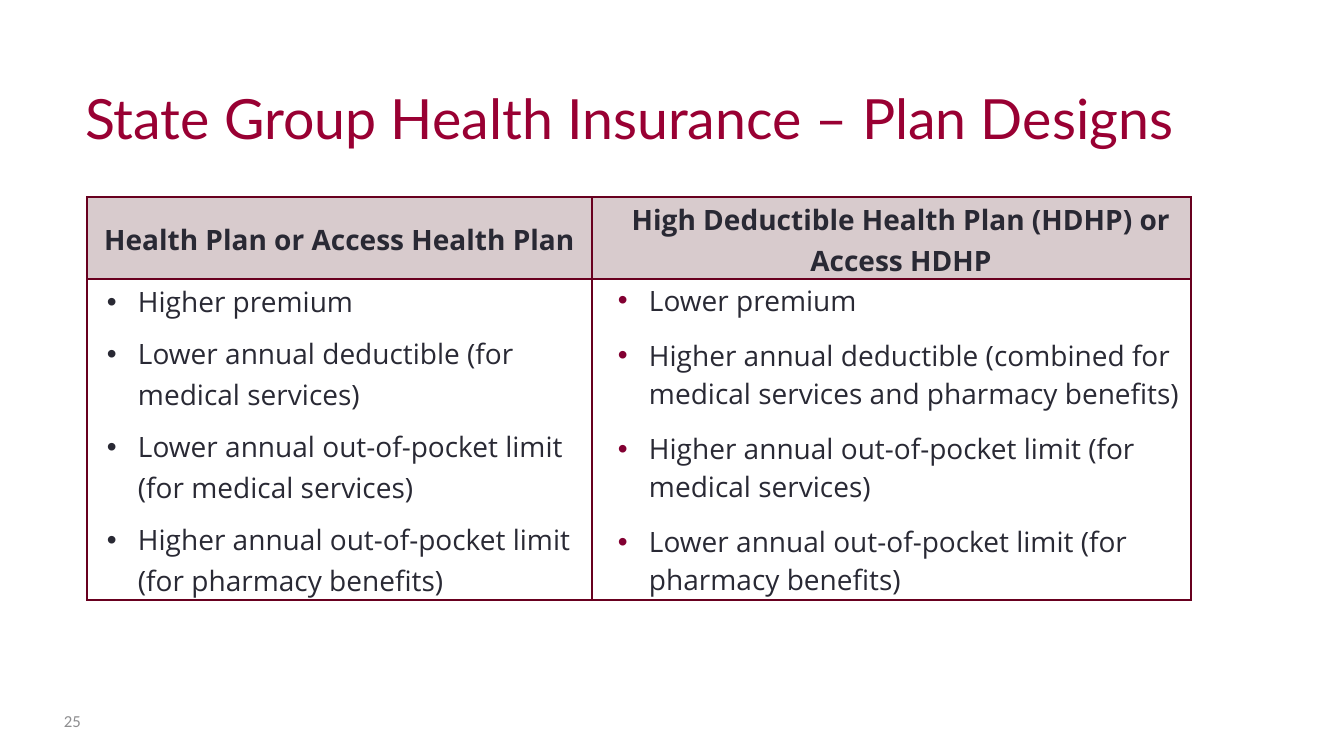
"""Build the slide that compares the State Group Health Insurance plan designs."""
from lxml.etree import SubElement
from pptx import Presentation
from pptx.dml.color import RGBColor
from pptx.enum.text import MSO_ANCHOR, MSO_AUTO_SIZE, PP_ALIGN
from pptx.oxml.ns import qn
from pptx.util import Pt

PX = 12192000 / 1344
COLORS = {
    "title": "990033",
    "text": "292934",
    "number": "8E8E90",
    "header": "D8CBCD",
    "border": "68001F",
    "bullet": "820032",
}


def px(length):
    return round(length * PX)


def write(frame, text, size=20, font="Open Sans", color="text", bold=False,
          align=PP_ALIGN.LEFT, spacing=None, before=None, after=None,
          margin=0, indent=0, bullet=None, level=0):
    frame.word_wrap = True
    for index, line in enumerate(text.split("\n")):
        paragraph = frame.paragraphs[0] if index == 0 else frame.add_paragraph()
        properties = paragraph._p.get_or_add_pPr()
        properties.set("marL", str(px(margin)))
        properties.set("indent", str(px(indent)))
        if bullet:
            bullet_color = SubElement(properties, qn("a:buClr"))
            SubElement(bullet_color, qn("a:srgbClr"), val=COLORS[bullet])
            SubElement(properties, qn("a:buFont"), typeface="Arial")
            SubElement(properties, qn("a:buChar"), char="•")
        paragraph.level = level
        paragraph.alignment = align
        paragraph.line_spacing = spacing
        paragraph.space_before = Pt(before) if before and index else Pt(0)
        paragraph.space_after = Pt(after or 0)
        run = paragraph.add_run()
        run.text = line
        run.font.size = Pt(size)
        run.font.name = font
        run.font.bold = bold
        run.font.color.rgb = RGBColor.from_string(COLORS[color])


deck = Presentation()
deck.slide_width, deck.slide_height = px(1344), px(756)
slide = deck.slides.add_slide(deck.slide_layouts[5])

title = slide.shapes.title
title.left, title.top, title.width, title.height = px(75), px(30), px(1204), px(126)
title.text_frame.auto_size = MSO_AUTO_SIZE.NONE
title.text_frame.vertical_anchor = MSO_ANCHOR.BOTTOM
write(title.text_frame, "State Group Health Insurance – Plan Designs",
      size=39.6, font="Lato", color="title")

page_number = slide.shapes.add_textbox(px(54), px(701), px(56), px(40))
page_number.text_frame.vertical_anchor = MSO_ANCHOR.MIDDLE
write(page_number.text_frame, "25", size=12, font="Calibri", color="number")

header_format = dict(bold=True, align=PP_ALIGN.CENTER, spacing=1.07, after=8)
plans = [
    {
        "width": 505,
        "name": "Health Plan or Access Health Plan",
        "name_margin": 0,
        "features": "Higher premium\n"
                    "Lower annual deductible (for medical services)\n"
                    "Lower annual out-of-pocket limit (for medical services)\n"
                    "Higher annual out-of-pocket limit (for pharmacy benefits)",
        "format": dict(spacing=1.07, after=8, margin=44, indent=-31, bullet="text"),
    },
    {
        "width": 599,
        "name": "High Deductible Health Plan (HDHP) or Access HDHP",
        "name_margin": 19,
        "features": "Lower premium\n"
                    "Higher annual deductible (combined for medical services"
                    " and pharmacy benefits)\n"
                    "Higher annual out-of-pocket limit (for medical services)\n"
                    "Lower annual out-of-pocket limit (for pharmacy benefits)",
        "format": dict(before=6, after=6, margin=50, indent=-31, bullet="bullet", level=1),
    },
]
row_heights = [82, 321]

comparison = slide.shapes.add_table(
    len(row_heights), len(plans), px(87), px(197),
    px(sum(plan["width"] for plan in plans)), px(sum(row_heights))).table
comparison.first_row = comparison.horz_banding = False
for row, height in zip(comparison.rows, row_heights):
    row.height = px(height)

for column, plan in enumerate(plans):
    comparison.columns[column].width = px(plan["width"])
    header, body = comparison.cell(0, column), comparison.cell(1, column)
    for cell in (header, body):
        cell.vertical_anchor = MSO_ANCHOR.MIDDLE
        cell.margin_left = cell.margin_right = px(7)
        cell.margin_top, cell.margin_bottom = px(1), 0
        for side in ("lnL", "lnR", "lnT", "lnB"):
            border = SubElement(cell._tc.get_or_add_tcPr(), qn(f"a:{side}"), w=str(Pt(1)))
            border_fill = SubElement(border, qn("a:solidFill"))
            SubElement(border_fill, qn("a:srgbClr"), val=COLORS["border"])
    header.fill.solid()
    header.fill.fore_color.rgb = RGBColor.from_string(COLORS["header"])
    body.fill.background()
    write(header.text_frame, plan["name"], margin=plan["name_margin"], **header_format)
    write(body.text_frame, plan["features"], **plan["format"])

deck.save("out.pptx")
